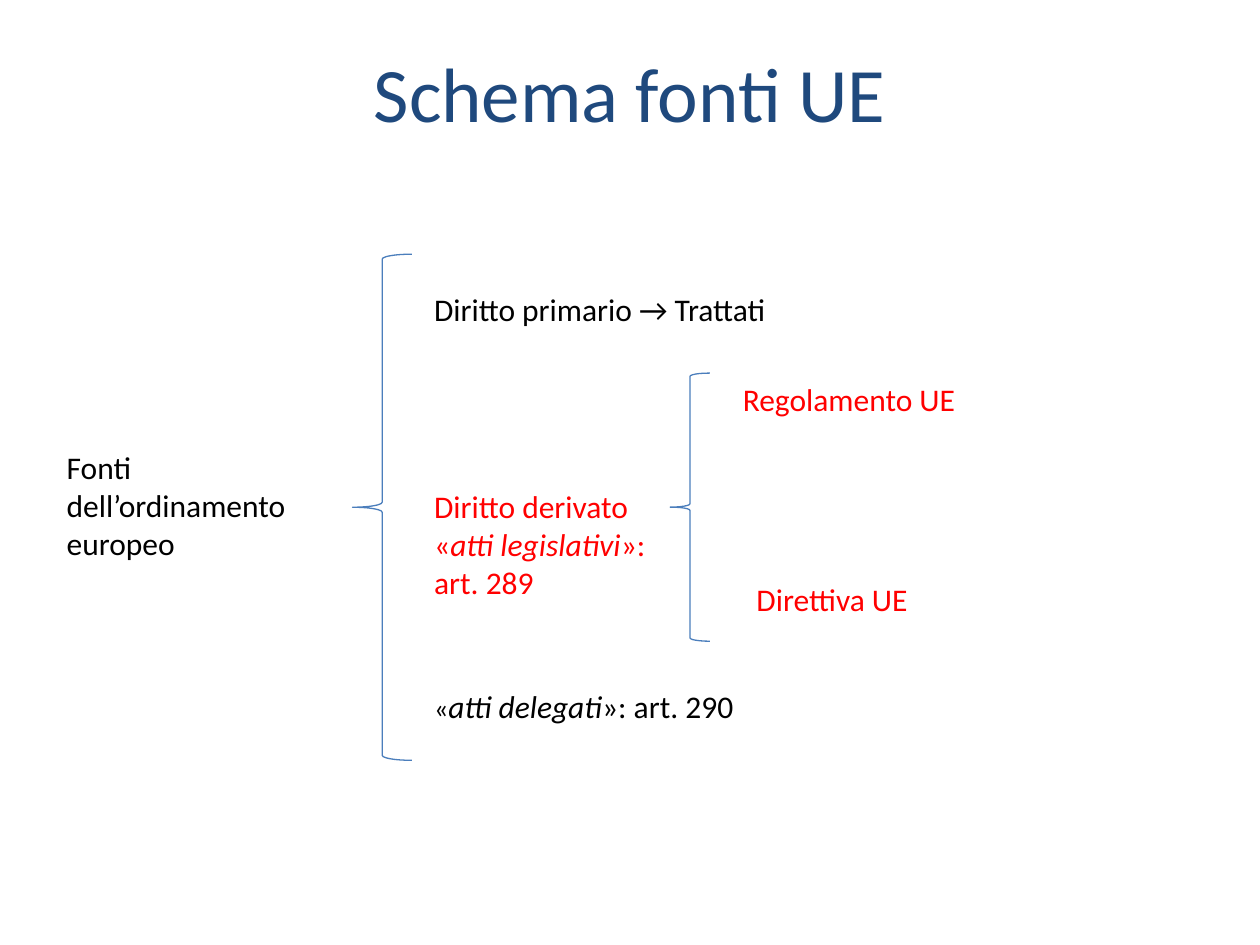
from pptx import Presentation
from pptx import util as u
from pptx.dml.color import RGBColor
from pptx.enum import shapes, text

COLOURS = {"title": "1F497D", "body": "000000", "accent": "FF0000", "brace": "4B7EBC"}


class SourcesSlide:
    font = "Calibri"
    body_size = 18
    line_width = 0.75

    def __init__(self, page):
        self.page = page

    def add_text(self, bounds, lines, colour="body", size=body_size):
        """Each line is a list of spans: (wording, optional run settings)."""
        box = self.page.shapes.add_textbox(*map(u.Pt, bounds))
        frame = box.text_frame
        frame.word_wrap = True
        for index, spans in enumerate(lines):
            para = frame.paragraphs[0] if index == 0 else frame.add_paragraph()
            for wording, settings in spans:
                span = para.add_run()
                span.text = wording
                span.font.name = self.font
                span.font.size = u.Pt(settings.get("size", size))
                span.font.italic = settings.get("italic", False)
                span.font.color.rgb = RGBColor.from_string(COLOURS[colour])
        return box

    def add_title(self, bounds, wording):
        frame = self.add_text(bounds, [[(wording, {})]], "title", 44).text_frame
        frame.vertical_anchor = text.MSO_ANCHOR.MIDDLE
        frame.paragraphs[0].alignment = text.PP_ALIGN.CENTER

    def add_label(self, bounds, wording, colour="body"):
        self.add_text(bounds, [[(wording, {})]], colour)

    def add_brace(self, bounds):
        brace = self.page.shapes.add_shape(
            shapes.MSO_SHAPE.LEFT_BRACE, *map(u.Pt, bounds))
        brace.shadow.inherit = False
        brace.fill.background()
        brace.line.color.rgb = RGBColor.from_string(COLOURS["brace"])
        brace.line.width = u.Pt(self.line_width)


def main():
    deck = Presentation()
    deck.slide_width, deck.slide_height = u.Pt(720), u.Pt(540)
    slide = SourcesSlide(deck.slides.add_slide(deck.slide_layouts[6]))
    italic = {"italic": True}
    branch_left, row_height = 241, 29

    slide.add_title((36, 21.6, 648, 61.2), "Schema fonti UE")
    slide.add_label((31, 252.7, 147.6, 72.7), "Fonti dell’ordinamento europeo")

    slide.add_brace((201.4, 145.3, 34, 289.2))
    slide.add_label((branch_left, 162, 249, row_height), "Diritto primario → Trattati")
    slide.add_text((branch_left, 274.8, 147.6, 72.7), [
        [("Diritto derivato", {})],
        [("«", {}), ("atti legislativi", italic), ("»:", {})],
        [("art. 289", {})],
    ], "accent")
    slide.add_text((branch_left, 388.8, 249, row_height), [
        [("«", {"size": 16}), ("atti delegati", italic), ("»: art. 290", {})],
    ])

    slide.add_brace((383, 213.2, 22.6, 153.2))
    slide.add_label((417.4, 213.8, 141.8, row_height), "Regolamento UE", "accent")
    slide.add_label((425.2, 328, 130.3, row_height), "Direttiva UE", "accent")

    deck.save("out.pptx")


if __name__ == "__main__":
    main()
